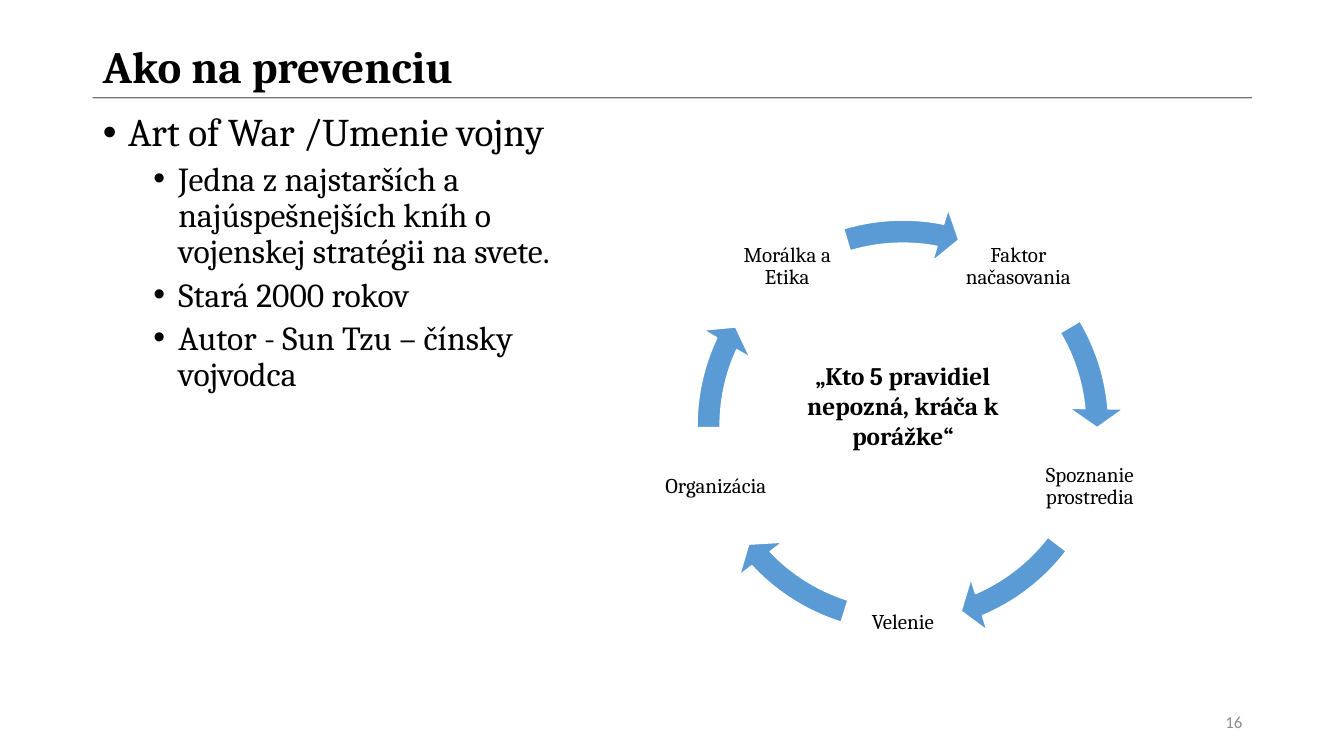
from math import cos, radians, sin

from pptx import Presentation
from pptx.dml.color import RGBColor
from pptx.enum.shapes import MSO_CONNECTOR, MSO_SHAPE
from pptx.enum.text import MSO_ANCHOR, MSO_AUTO_SIZE, PP_ALIGN
from pptx.oxml.ns import qn
from pptx.util import Inches, Pt
from lxml.etree import SubElement

SLIDE_W, SLIDE_H = 13.33, 7.5
MARGIN = 0.92
CONTENT_W = 11.5
BODY_W = 5.36
TITLE_BOX = (MARGIN, 0.4, CONTENT_W, 0.57)
BODY_BOX = (MARGIN, 1.07, BODY_W, 5.68)
CYCLE_BOX = (6.76, 2.03, 4.39, 4.39)
NUMBER_BOX = (MARGIN + CONTENT_W - 3, 6.96, 3, 0.4)

BULLETS = [
    (0, "Art of War /Umenie vojny"),
    (1, "Jedna z najstarších a najúspešnejších kníh o vojenskej stratégii na svete."),
    (1, "Stará 2000 rokov"),
    (1, "Autor - Sun Tzu – čínsky vojvodca"),
]
LEVELS = [
    {"indent": 0.25, "size": 28, "before": 10},
    {"indent": 0.75, "size": 24, "before": 5},
]
RULES = [
    ("Faktor načasovania", 329.4, 354.93),
    ("Spoznanie prostredia", 37.52, 66.95),
    ("Velenie", 107.46, 136.89),
    ("Organizácia", 179.49, 205.01),
    ("Morálka a Etika", 253.28, 281.13),
]
QUOTE = "„Kto 5 pravidiel nepozná, kráča k porážke“"


def rgb(color):
    return RGBColor.from_string(color)


def place(sp, box):
    for name, value in zip(("left", "top", "width", "height"), box):
        setattr(sp, name, Inches(value))


def style(target, **values):
    for name, value in values.items():
        setattr(target, name, value)


def write(p, text, size, color="000000", name="Cambria", bold=False):
    r = p.add_run()
    r.text = text
    style(r.font, size=Pt(size), name=name, bold=bold)
    r.font.color.rgb = rgb(color)


def add_label(shapes, box, text, size, inset=None, spacing=None,
              align=PP_ALIGN.CENTER, anchor=MSO_ANCHOR.MIDDLE, **font):
    tf = shapes.add_textbox(*map(Inches, box)).text_frame
    style(tf, word_wrap=True, vertical_anchor=anchor)
    if inset is not None:
        for side in ("left", "top", "right", "bottom"):
            setattr(tf, f"margin_{side}", Inches(inset))
    p = tf.paragraphs[0]
    style(p, alignment=align, line_spacing=spacing)
    write(p, text, size, **font)


def add_title(s, box):
    left, top, width, height = box
    sp = s.shapes.title
    place(sp, box)
    tf = sp.text_frame
    style(tf, word_wrap=True, auto_size=MSO_AUTO_SIZE.NONE,
          vertical_anchor=MSO_ANCHOR.MIDDLE)
    p = tf.paragraphs[0]
    style(p, alignment=PP_ALIGN.LEFT, line_spacing=0.9)
    write(p, "Ako na prevenciu", 32, bold=True)

    bottom = Inches(top + height)
    rule = s.shapes.add_connector(MSO_CONNECTOR.STRAIGHT, Inches(left), bottom,
                                  Inches(left + width), bottom)
    rule.line.width = Pt(1)
    rule.line.color.rgb = rgb("000000")
    sppr = rule._element.spPr
    SubElement(next(sppr.iter(qn("a:srgbClr"))), qn("a:alpha"), val="54000")
    SubElement(sppr, qn("a:effectLst"))


def add_bullets(s, box):
    sp = s.placeholders[1]
    place(sp, box)
    tf = sp.text_frame
    style(tf, word_wrap=True, auto_size=MSO_AUTO_SIZE.NONE,
          vertical_anchor=MSO_ANCHOR.TOP)
    for i, (level, text) in enumerate(BULLETS):
        p = tf.paragraphs[0] if i == 0 else tf.add_paragraph()
        look = LEVELS[level]
        ppr = p._p.get_or_add_pPr()
        ppr.set("marL", str(Inches(look["indent"])))
        ppr.set("indent", str(-Inches(0.25)))
        SubElement(ppr, qn("a:buFont"), typeface="Arial")
        SubElement(ppr, qn("a:buChar"), char="•")
        style(p, level=level, line_spacing=0.9,
              space_before=Pt(look["before"] if i else 0))
        write(p, text, look["size"])


def add_cycle(s, box):
    left, top, width, height = box
    cx, cy = left + width / 2, top + height / 2
    radius, side = 1.95, 1.17
    shapes = s.shapes.add_group_shape().shapes
    step = 360 / len(RULES)
    for i, (text, start, end) in enumerate(RULES):
        angle = radians(-90 + step * (i + 0.5))
        x = cx + radius * cos(angle) - side / 2
        y = cy + radius * sin(angle) - side / 2
        add_label(shapes, (x, y, side, side), text, 15, inset=0.02, spacing=0.9)
        arrow = shapes.add_shape(MSO_SHAPE.CIRCULAR_ARROW, *map(Inches, box))
        arrow.shadow.inherit = False
        arrow.fill.solid()
        arrow.fill.fore_color.rgb = rgb("5B9BD5")
        arrow.line.color.rgb = rgb("FFFFFF")
        arrow.line.width = Pt(1)
        for k, value in enumerate((0.052, 3.354, end * 0.6, start * 0.6, 0.061)):
            arrow.adjustments[k] = value
    quote_w = 2.83
    add_label(s.shapes, (cx - quote_w / 2, cy - 0.7, quote_w, 1.31), QUOTE, 18,
              anchor=MSO_ANCHOR.TOP, bold=True)


def main():
    prs = Presentation()
    style(prs, slide_width=Inches(SLIDE_W), slide_height=Inches(SLIDE_H))
    s = prs.slides.add_slide(prs.slide_layouts[1])
    add_title(s, TITLE_BOX)
    add_bullets(s, BODY_BOX)
    add_cycle(s, CYCLE_BOX)
    add_label(s.shapes, NUMBER_BOX, "16", 12, align=PP_ALIGN.RIGHT,
              color="8C8C8C", name="Calibri")
    prs.save("out.pptx")


if __name__ == "__main__":
    main()
